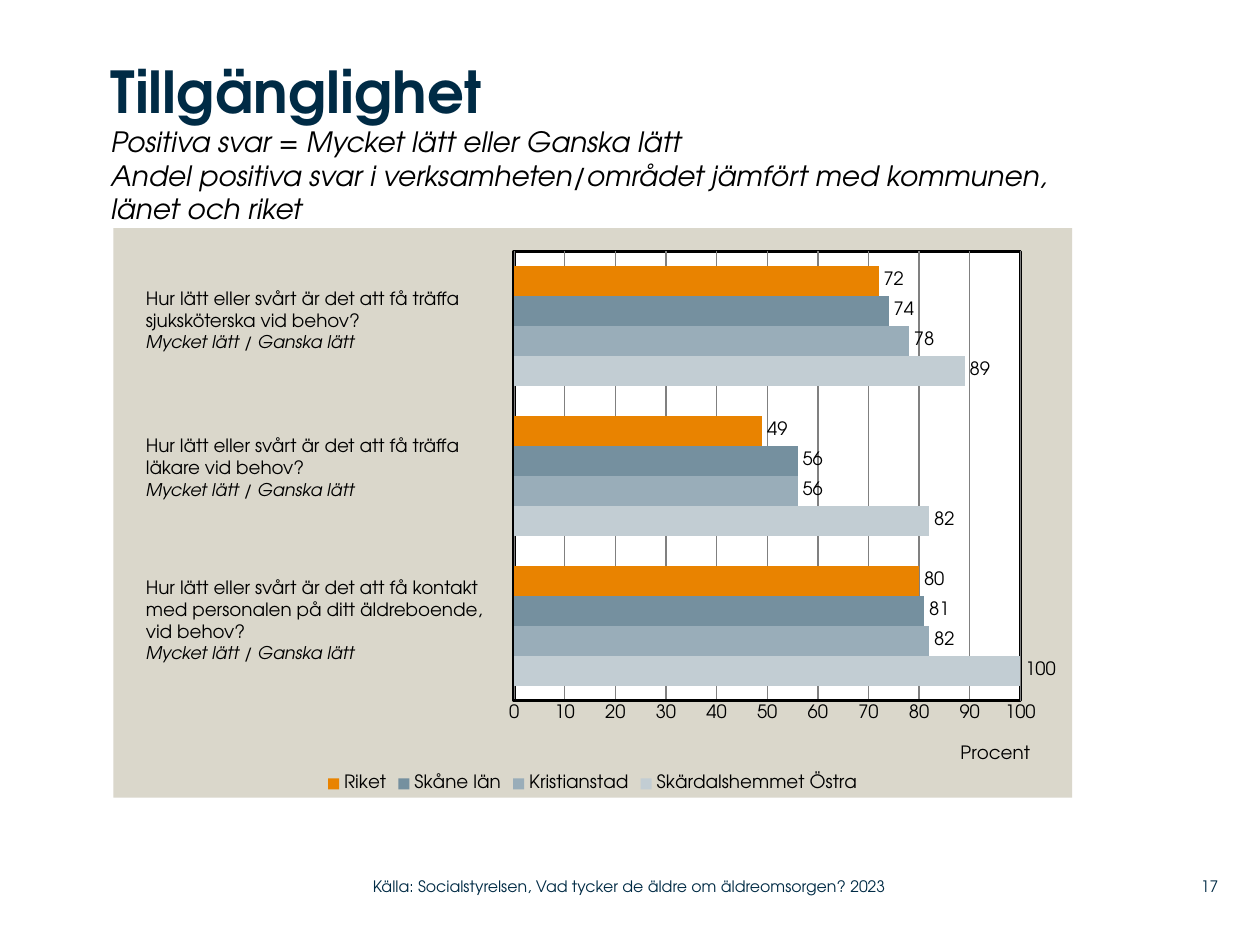
from lxml import etree
from pptx import Presentation
from pptx import util as u
from pptx.chart.data import CategoryChartData
from pptx.dml.color import RGBColor
from pptx.enum import chart as ec, text
from pptx.oxml import parse_xml
from pptx.oxml.ns import nsdecls

FONT = "TeX Gyre Adventor"
NAVY = RGBColor(0x00, 0x2B, 0x45)
BLACK = RGBColor(0, 0, 0)
WHITE = RGBColor(0xFF, 0xFF, 0xFF)
GREY = RGBColor(0x80, 0x80, 0x80)
SAND = RGBColor(0xDA, 0xD7, 0xCB)
ORANGE = RGBColor(0xE9, 0x83, 0x00)
SLATE = RGBColor(0x75, 0x90, 0x9F)
MIST = RGBColor(0x99, 0xAD, 0xB9)
PALE = RGBColor(0xC2, 0xCD, 0xD3)

prs = Presentation()
prs.slide_width, prs.slide_height = u.Inches(10), u.Inches(7.5)
W, H = prs.slide_width, prs.slide_height
s = prs.slides.add_slide(prs.slide_layouts[5])


def box(x, y, w, h):
    return int(W * x / 100), int(H * y / 100), int(W * w / 100), int(H * h / 100)


def style(font, size, color=BLACK, bold=False, italic=False):
    font.name, font.size, font.bold, font.italic = FONT, u.Pt(size), bold, italic
    font.color.rgb = color


data = CategoryChartData()
data.categories = ["1", "2", "3"]
series = [
    ("Skärdalshemmet Östra", (100, 82, 89), PALE),
    ("Kristianstad", (82, 56, 78), MIST),
    ("Skåne län", (81, 56, 74), SLATE),
    ("Riket", (80, 49, 72), ORANGE),
]
for name, values, color in series:
    data.add_series(name, values)
chart = s.shapes.add_chart(ec.XL_CHART_TYPE.BAR_CLUSTERED, *box(9, 24.13, 76.1, 60.27), data).chart
style(chart.font, 10.5)
chart.has_title = False
chart.has_legend = True
chart.legend.position = ec.XL_LEGEND_POSITION.BOTTOM
chart.legend.include_in_layout = False
style(chart.legend.font, 10.5)
chart.category_axis.visible = False

axis = chart.value_axis
axis.minimum_scale, axis.maximum_scale, axis.major_unit = 0, 100, 10
axis.major_tick_mark = axis.minor_tick_mark = ec.XL_TICK_MARK.NONE
axis.format.line.color.rgb, axis.format.line.width = BLACK, u.Pt(2)
axis.major_gridlines.format.line.color.rgb = GREY
axis.major_gridlines.format.line.width = u.Pt(0.75)
style(axis.tick_labels.font, 10.5)
axis.axis_title.text_frame.text = "Procent"
style(axis.axis_title.text_frame.paragraphs[0].font, 10.5)

plot = chart.plots[0]
plot.gap_width, plot.overlap, plot.vary_by_categories = 100, 0, False
for ser, (name, values, color) in zip(plot.series, series):
    ser.format.fill.solid()
    ser.format.fill.fore_color.rgb = color
    ser.data_labels.show_value = True
    ser.data_labels.position = ec.XL_LABEL_POSITION.OUTSIDE_END
    style(ser.data_labels.font, 10.5)

LAYOUT = (
    f'<c:layout {nsdecls("c")}><c:manualLayout>{{}}<c:xMode val="edge"/><c:yMode val="edge"/>'
    '<c:x val="{}"/><c:y val="{}"/>{}</c:manualLayout></c:layout>'
)
SHAPE = (
    f'<c:spPr {nsdecls("c", "a")}><a:solidFill><a:srgbClr val="{{}}"/></a:solidFill>'
    '<a:ln w="{}">{}</a:ln></c:spPr>'
)
space = chart.element
area = space.chart.plotArea
for old in area.findall("{*}layout"):
    area.remove(old)
area.insert(0, parse_xml(LAYOUT.format(
    '<c:layoutTarget val="inner"/>', 0.418, 0.041, '<c:w val="0.528"/><c:h val="0.789"/>')))
area.append(parse_xml(SHAPE.format(
    WHITE, u.Pt(2), f'<a:solidFill><a:srgbClr val="{BLACK}"/></a:solidFill>')))
space.chart.addnext(parse_xml(SHAPE.format(SAND, 0, "<a:noFill/>")))
title = axis.axis_title._element
for old in title.findall("{*}layout"):
    title.remove(old)
title.find("{*}tx").addnext(parse_xml(LAYOUT.format("", 0.88, 0.9, "")))

sp = s.shapes.title
sp.left, sp.top, sp.width, sp.height = box(8.8, 5.6, 77.7, 18.53)
tf = sp.text_frame
tf.margin_left = tf.margin_right = tf.margin_top = tf.margin_bottom = 0
tf.word_wrap, tf.auto_size = True, text.MSO_AUTO_SIZE.NONE
tf.vertical_anchor = text.MSO_ANCHOR.MIDDLE
p = tf.paragraphs[0]
p.alignment = text.PP_ALIGN.LEFT
r = p.add_run()
r.text = "Tillgänglighet"
style(r.font, 33, NAVY, bold=True)
for line in (
    "Positiva svar = Mycket lätt eller Ganska lätt",
    "Andel positiva svar i verksamheten/området jämfört med kommunen, länet och riket",
):
    p.add_line_break()
    r = p.add_run()
    r.text = line
    style(r.font, 16, italic=True)

questions = [
    (29.73, 29.9, 10.8, ["Hur lätt eller svårt är det att få träffa sjuksköterska vid behov?"]),
    (45.33, 29.3, 10.8, ["Hur lätt eller svårt är det att få träffa", "läkare vid behov?"]),
    (60.27, 30.1, 13.07, ["Hur lätt eller svårt är det att få kontakt",
                          "med personalen på ditt äldreboende,", "vid behov?"]),
]
for y, w, h, lines in questions:
    tf = s.shapes.add_textbox(*box(10.6, y, w, h)).text_frame
    tf.word_wrap, tf.auto_size = True, text.MSO_AUTO_SIZE.SHAPE_TO_FIT_TEXT
    tf.text = "\n".join(lines + ["Mycket lätt / Ganska lätt"])
    for p in tf.paragraphs[:-1]:
        style(p.font, 10.5)
    style(tf.paragraphs[-1].font, 10, italic=True)

for x, w, align, line in (
    (92, 4.7, text.PP_ALIGN.RIGHT, "17"),
    (29.6, 44.3, text.PP_ALIGN.LEFT,
     "Källa: Socialstyrelsen, Vad tycker de äldre om äldreomsorgen? 2023"),
):
    tf = s.shapes.add_textbox(*box(x, 91.87, w, 3.87)).text_frame
    tf.margin_left = tf.margin_right = tf.margin_top = tf.margin_bottom = 0
    tf.word_wrap, tf.vertical_anchor = True, text.MSO_ANCHOR.MIDDLE
    tf.text = line
    tf.paragraphs[0].alignment = align
    style(tf.paragraphs[0].font, 9, NAVY)

prs.save("out.pptx")
